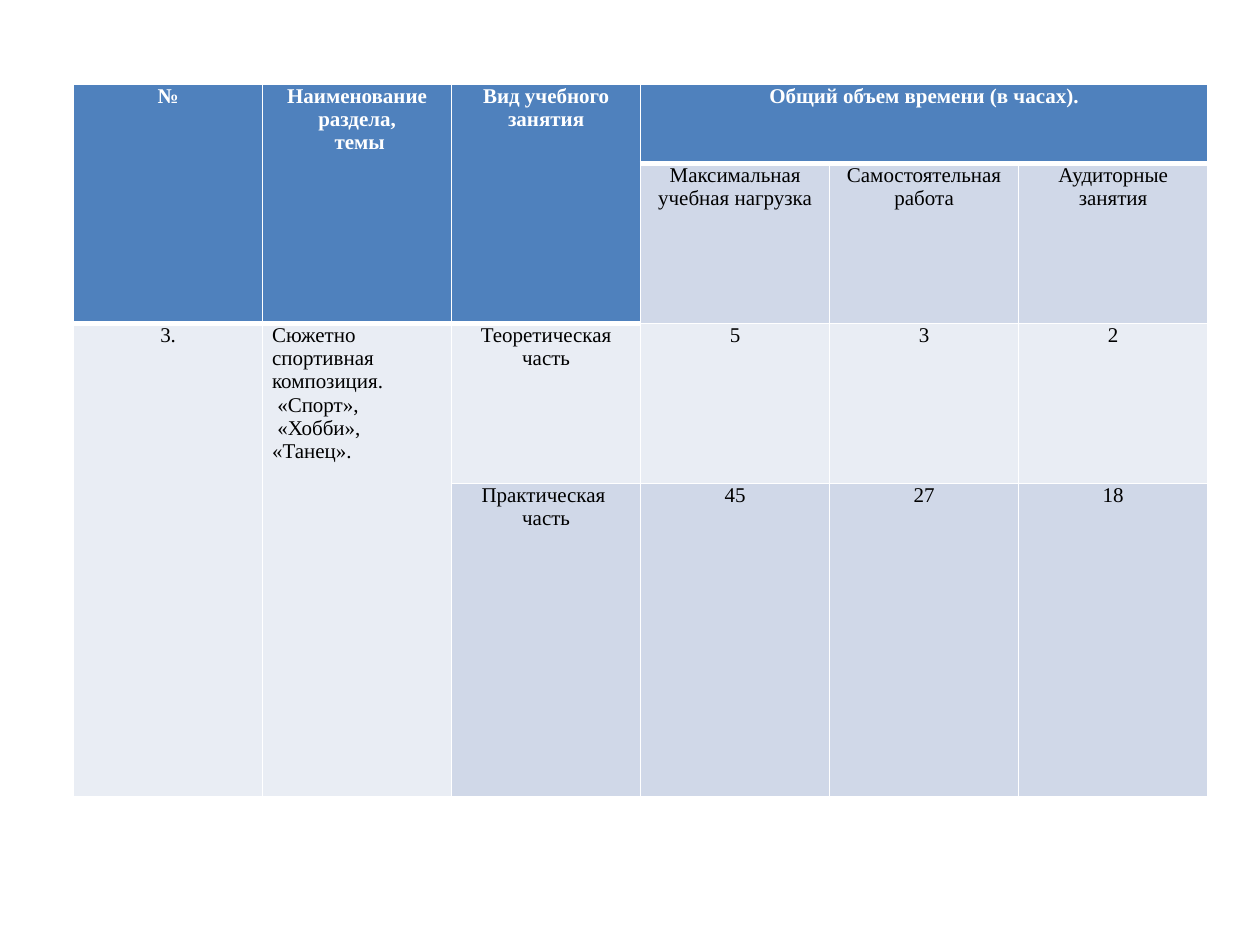
from lxml import etree
from pptx import Presentation
from pptx.dml.color import RGBColor
from pptx.enum import text
from pptx.oxml import ns
from pptx.util import Pt

COLORS = {"header": "4F81BD", "dark_band": "D0D8E8", "light_band": "E9EDF4",
          "white": "FFFFFF", "black": "000000"}
COLUMN_WIDTH = 108
ROW_HEIGHTS = [45.3, 91.4, 91.4, 179.3]
BANDS = ["header", "dark_band", "light_band", "dark_band"]
MARGINS = {"margin_left": Pt(5.4), "margin_right": Pt(5.4),
           "margin_top": 0, "margin_bottom": 0}

# Each line of a cell is a paragraph; None marks a cell covered by a merge.
CONTENT = [
    ["№", "Наименование раздела,\n темы", "Вид учебного занятия",
     "Общий объем времени (в часах).", None, None],
    [None, None, None, "Максимальная учебная нагрузка",
     "Самостоятельная работа", "Аудиторные занятия"],
    ["3.", "Сюжетно спортивная композиция.\n «Спорт»,\n «Хобби»,\n«Танец».",
     "Теоретическая\nчасть", "5", "3", "2"],
    [None, None, "Практическая \nчасть", "45", "27", "18"],
]
MERGES = [((0, 0), (1, 0)), ((0, 1), (1, 1)), ((0, 2), (1, 2)),
          ((0, 3), (0, 5)), ((2, 0), (3, 0)), ((2, 1), (3, 1))]


def is_header(row, col):
    return row == 0 or (row == 1 and col < 3)


def add_border(cell, side, width):
    line = etree.SubElement(cell._tc.get_or_add_tcPr(), ns.qn(f"a:ln{side}"),
                            w=str(Pt(width)))
    fill = etree.SubElement(line, ns.qn("a:solidFill"))
    etree.SubElement(fill, ns.qn("a:srgbClr"), val=COLORS["white"])


prs = Presentation()
prs.slide_width, prs.slide_height = Pt(720), Pt(540)
slide = prs.slides.add_slide(prs.slide_layouts[6])

column_count = len(CONTENT[0])
hours = slide.shapes.add_table(
    len(CONTENT), column_count, Pt(42.1), Pt(48.2),
    Pt(COLUMN_WIDTH * column_count), Pt(sum(ROW_HEIGHTS))).table
for column in hours.columns:
    column.width = Pt(COLUMN_WIDTH)
for row, height in zip(hours.rows, ROW_HEIGHTS):
    row.height = Pt(height)
for first, last in MERGES:
    hours.cell(*first).merge(hours.cell(*last))

for r, row_content in enumerate(CONTENT):
    for c, wording in enumerate(row_content):
        cell = hours.cell(r, c)
        header = is_header(r, c)
        below_header = r > 0 and is_header(r - 1, c) and not header
        widths = {"L": 1, "R": 1, "T": 3 if below_header else 1,
                  "B": 3 if header else 1}
        for side, width in widths.items():
            add_border(cell, side, width)
        cell.fill.solid()
        band = "header" if header else BANDS[r]
        cell.fill.fore_color.rgb = RGBColor.from_string(COLORS[band])
        for name, value in MARGINS.items():
            setattr(cell, name, value)
        if wording is None:
            continue

        cell.text_frame.text = wording
        left_aligned = c == 1 and not header
        font_format = {"name": "Times New Roman", "size": Pt(12), "bold": header}
        for paragraph in cell.text_frame.paragraphs:
            paragraph.alignment = (text.PP_ALIGN.LEFT if left_aligned
                                   else text.PP_ALIGN.CENTER)
            font = paragraph.runs[0].font
            for name, value in font_format.items():
                setattr(font, name, value)
            font.color.rgb = RGBColor.from_string(
                COLORS["white" if header else "black"])

prs.save("out.pptx")
